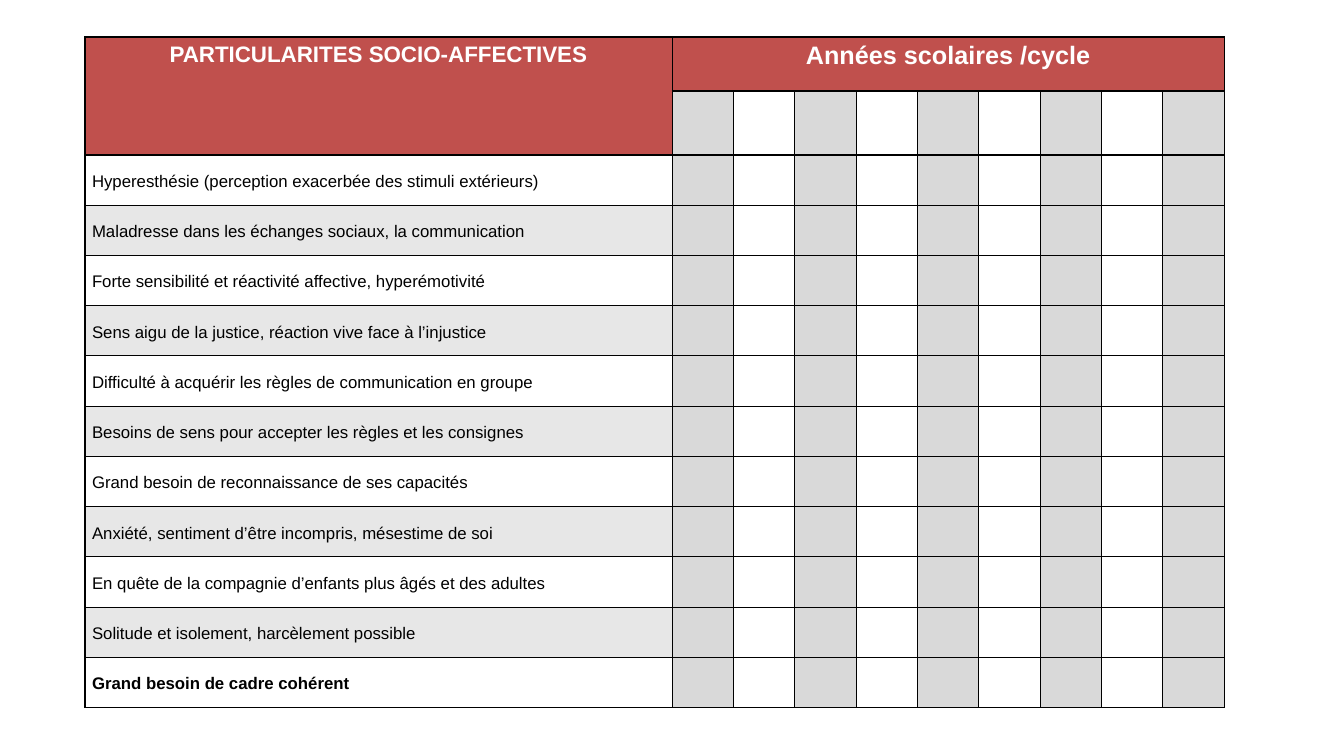
import pptx
import pptx.dml.color
import pptx.enum.text
import pptx.oxml
import pptx.oxml.ns
import pptx.util

PX = 914400 / 100.8
RED = pptx.dml.color.RGBColor(0xC0, 0x50, 0x4D)
WHITE = pptx.dml.color.RGBColor(0xFF, 0xFF, 0xFF)
BLACK = pptx.dml.color.RGBColor(0, 0, 0)
BAND = pptx.dml.color.RGBColor(0xE7, 0xE7, 0xE7)
GREY = pptx.dml.color.RGBColor(0xD9, 0xD9, 0xD9)

TRAITS = [
    "Hyperesthésie (perception exacerbée des stimuli extérieurs)",
    "Maladresse dans les échanges sociaux, la communication",
    "Forte sensibilité et réactivité affective, hyperémotivité",
    "Sens aigu de la justice, réaction vive face à l’injustice",
    "Difficulté à acquérir les règles de communication en groupe",
    "Besoins de sens pour accepter les règles et les consignes",
    "Grand besoin de reconnaissance de ses capacités",
    "Anxiété, sentiment d’être incompris, mésestime de soi",
    "En quête de la compagnie d’enfants plus âgés et des adultes",
    "Solitude et isolement, harcèlement possible",
    "Grand besoin de cadre cohérent",
]
YEARS = 9
HEADER_ROWS = 2


def px(n):
    return pptx.util.Emu(round(n * PX))


def write(cell, text, size, color, bold):
    cell.text = text
    p = cell.text_frame.paragraphs[0]
    p.font.name = "Arial"
    p.font.size = pptx.util.Pt(size)
    p.font.bold = bold
    p.font.color.rgb = color
    return p


prs = pptx.Presentation()
prs.slide_width = pptx.util.Inches(13.33)
prs.slide_height = pptx.util.Inches(7.5)
s = prs.slides.add_slide(prs.slide_layouts[6])

table = s.shapes.add_table(
    HEADER_ROWS + len(TRAITS), 1 + YEARS, px(85), px(37), px(1139), px(671)
).table
table.first_row = False
table.horz_banding = False

table.columns[0].width = px(587)
for col in range(1, 1 + YEARS):
    table.columns[col].width = px(552) // YEARS
table.rows[0].height = px(54)
table.rows[1].height = px(64)
for row in range(HEADER_ROWS, len(table.rows)):
    table.rows[row].height = px(553) // len(TRAITS)

# Fills and black borders
for row in range(len(table.rows)):
    for col in range(len(table.columns)):
        cell = table.cell(row, col)
        if row == 0 or (col == 0 and row < HEADER_ROWS):
            color = RED
        elif col == 0:
            color = BAND if row % 2 else WHITE
        else:
            color = GREY if col % 2 else WHITE
        cell.fill.solid()
        cell.fill.fore_color.rgb = color
        tcPr = cell._tc.get_or_add_tcPr()
        for i, side in enumerate("LRTB"):
            tcPr.insert(i, pptx.oxml.parse_xml(
                f'<a:ln{side} {pptx.oxml.ns.nsdecls("a")} w="12700"><a:solidFill>'
                f'<a:srgbClr val="{BLACK}"/></a:solidFill></a:ln{side}>'))

# Headings
table.cell(0, 0).merge(table.cell(1, 0))
table.cell(0, 1).merge(table.cell(0, YEARS))
for col, text, size in [(0, "PARTICULARITES SOCIO-AFFECTIVES", 16),
                        (1, "Années scolaires /cycle", 18)]:
    p = write(table.cell(0, col), text, size, WHITE, True)
    p.alignment = pptx.enum.text.PP_ALIGN.CENTER

# Traits, the last one in bold
for row, trait in enumerate(TRAITS, HEADER_ROWS):
    cell = table.cell(row, 0)
    p = write(cell, trait, 12, BLACK, trait == TRAITS[-1])
    p.line_spacing = 1.15
    cell.vertical_anchor = pptx.enum.text.MSO_ANCHOR.MIDDLE
    cell.margin_left = cell.margin_right = px(7)
    cell.margin_top = cell.margin_bottom = 0

prs.save("out.pptx")
